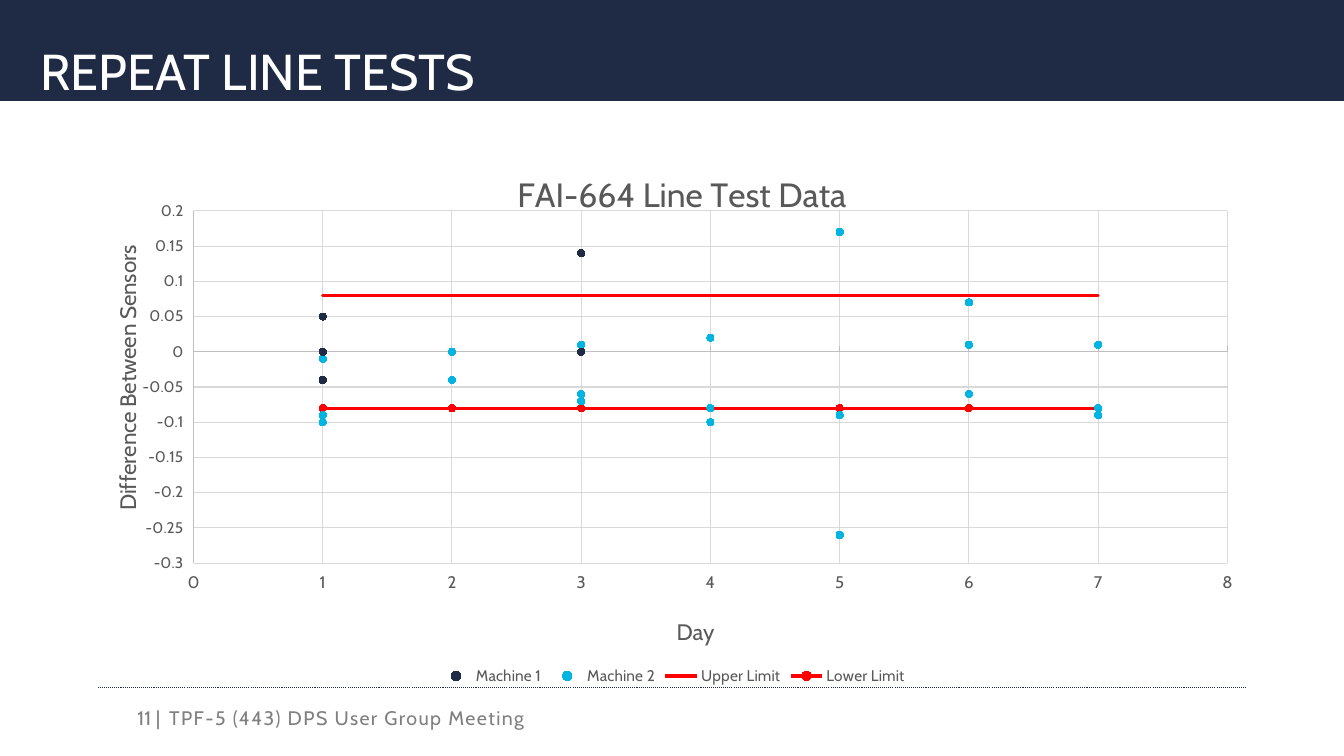
from dataclasses import dataclass

from lxml.etree import SubElement
from pptx import Presentation
from pptx.chart.data import XyChartData
from pptx.dml.color import RGBColor
from pptx.enum.chart import (XL_CHART_TYPE as CT, XL_LEGEND_POSITION as LP, XL_MARKER_STYLE as MS,
                             XL_TICK_LABEL_POSITION as TLP, XL_TICK_MARK as TM)
from pptx.enum.dml import MSO_LINE
from pptx.enum.shapes import MSO_CONNECTOR
from pptx.enum.text import MSO_ANCHOR as ANC, MSO_AUTO_SIZE as AUTO, PP_ALIGN as AL
from pptx.oxml import parse_xml
from pptx.oxml.ns import nsdecls, qn
from pptx.util import Inches, Pt


@dataclass(frozen=True)
class Theme:
    """Colours, font and type sizes of the slide."""
    font: str = "Cabin"
    navy: str = "1F2A44"
    cyan: str = "00B5E2"
    red: str = "FF0000"
    white: str = "FFFFFF"
    footer: str = "808080"
    label: str = "595959"
    axis: str = "BFBFBF"
    grid: str = "D9D9D9"
    title_pt: int = 36
    footer_pt: int = 14
    chart_title_pt: int = 24
    axis_title_pt: int = 16
    day_pt: int = 12
    label_pt: int = 11


T = Theme()
W, H = 13.33, 7.5
DAYS = list(range(1, 8)) * 3
MACHINE_1 = {0: 0.05, 2: 0.14, 7: -0.04, 9: 0, 14: 0, 16: 0.14}
MACHINE_2 = [-0.09, -0.04, 0.01, 0.02, 0.17, -0.06, 0.01,
             -0.01, 0, -0.07, -0.1, -0.26, 0.07, -0.09,
             -0.1, -0.04, -0.06, -0.08, -0.09, 0.01, -0.08]
SERIES = [
    ("Machine 1", [MACHINE_1.get(i) for i in range(len(DAYS))], None, T.navy),
    ("Machine 2", MACHINE_2, None, T.cyan),
    ("Upper Limit", [0.08] * len(DAYS), T.red, None),
    ("Lower Limit", [-0.08] * len(DAYS), T.red, T.red),
]


def put(obj, **values):
    """Set every given attribute on an object."""
    for name, value in values.items():
        setattr(obj, name, value)


def box(x, y, w, h):
    """Turn a box in inches into slide lengths."""
    return [Inches(v) for v in (x, y, w, h)]


def style_font(font, size, color, kern=None):
    """Format a font from the theme."""
    put(font, name=T.font, size=Pt(size), bold=False)
    font.color.rgb = RGBColor.from_string(color)
    if kern:
        font._element.set("kern", str(kern * 100))


def style_line(line, color, width, dash=None):
    """Format a line."""
    line.color.rgb = RGBColor.from_string(color)
    put(line, width=Pt(width), dash_style=dash)


def set_text(sp, text, size, color, insets, anchor, align=AL.LEFT, wrap=True, spacing=0):
    """Write one formatted line of text into a shape."""
    tf = sp.text_frame
    names = ("margin_left", "margin_top", "margin_right", "margin_bottom")
    put(tf, **dict(zip(names, map(Inches, insets))))
    put(tf, word_wrap=wrap, auto_size=AUTO.NONE, vertical_anchor=anchor)
    p = tf.paragraphs[0]
    p.alignment = align
    r = p.add_run()
    r.text = text
    style_font(r.font, size, color)
    if spacing:
        r.font._element.set("spc", str(spacing * 100))


def add_title(s, text):
    """Turn the title placeholder into the top banner."""
    sp = s.shapes.title
    put(sp, **dict(zip(("left", "top", "width", "height"), box(0, 0, W, 1))))
    sp.fill.solid()
    sp.fill.fore_color.rgb = RGBColor.from_string(T.navy)
    set_text(sp, text, T.title_pt, T.white, (0.4, 0.1, 0.4, 0), ANC.BOTTOM)


def add_footer(s, number, text):
    """Add the dotted rule, page number and meeting name."""
    y = H * 0.91
    rule = s.shapes.add_connector(MSO_CONNECTOR.STRAIGHT, *box(0.97, y, 12.37, y))
    style_line(rule.line, T.navy, 0.75, MSO_LINE.ROUND_DOT)
    SubElement(rule._element.spPr, qn("a:effectLst"))
    top, height = 6.92, 0.4
    page = s.shapes.add_textbox(*box(1.07, top, 0.52, height))
    set_text(page, number, T.footer_pt, T.footer, (0, 0, 0, 0), ANC.MIDDLE, AL.RIGHT, False)
    name = s.shapes.add_textbox(*box(1.58, top, 8.48, height))
    set_text(name, text, T.footer_pt, T.footer, (0.1, 0.05, 0.1, 0.05), ANC.MIDDLE, spacing=1)


def layout_xml(**values):
    """Build a manual layout from shares of the chart."""
    parts = "".join(f'<c:{k} val="{v}"/>' for k, v in values.items())
    return parse_xml(f'<c:layout {nsdecls("c")}><c:manualLayout>{parts}</c:manualLayout></c:layout>')


def set_chart_title(owner, text, size, x, y):
    """Title a chart or an axis at shares of the chart."""
    owner.has_title = True
    title = owner.chart_title if hasattr(owner, "chart_title") else owner.axis_title
    r = title.text_frame.paragraphs[0].add_run()
    r.text = text
    style_font(r.font, size, T.label, 12)
    el = title._element
    for old in el.findall(qn("c:layout")):
        el.remove(old)
    el.find(qn("c:tx")).addnext(layout_xml(xMode="edge", yMode="edge", x=x, y=y))
    return title


def style_axis(axis, size, tick, fmt):
    """Format one axis with its gridlines."""
    put(axis, has_major_gridlines=True, major_tick_mark=tick, minor_tick_mark=TM.NONE,
        tick_label_position=TLP.LOW)
    put(axis.tick_labels, number_format=fmt, number_format_is_linked=False)
    style_font(axis.tick_labels.font, size, T.label, 12)
    style_line(axis.format.line, T.axis, 0.75)
    style_line(axis.major_gridlines.format.line, T.grid, 0.75)


def style_series(series, line, marker):
    """Draw a series as points, a line or both."""
    series.smooth = False
    if line:
        style_line(series.format.line, line, 2.25)
    else:
        series.format.line.fill.background()
    if marker:
        put(series.marker, style=MS.CIRCLE, size=5)
        fmt = series.marker.format
        fmt.fill.solid()
        fmt.fill.fore_color.rgb = RGBColor.from_string(marker)
        style_line(fmt.line, marker, 0.75)
    else:
        series.marker.style = MS.NONE


def place_plot(chart, x, y, w, h):
    """Fix the inner plot area as shares of the chart."""
    area = chart._chartSpace.chart.plotArea
    for old in area.findall(qn("c:layout")):
        area.remove(old)
    area.insert(0, layout_xml(layoutTarget="inner", xMode="edge", yMode="edge", x=x, y=y, w=w, h=h))


def add_line_test_chart(s):
    """Add the scatter chart of sensor differences by day."""
    data = XyChartData()
    for name, values, _, _ in SERIES:
        series = data.add_series(name)
        for day, value in zip(DAYS, values):
            series.add_data_point(day, value)
    chart = s.shapes.add_chart(CT.XY_SCATTER, *box(0.96, 1.42, 11.42, 5.42), data).chart
    for pt in chart._chartSpace.xpath('.//c:pt[c:v="None"]'):
        pt.getparent().remove(pt)
    style_font(chart.font, T.label_pt, T.label, 12)
    set_chart_title(chart, "FAI-664 Line Test Data", T.chart_title_pt, 0.36, 0.04)
    day, difference = chart.category_axis, chart.value_axis
    style_axis(day, T.day_pt, TM.INSIDE, "#,##0")
    style_axis(difference, T.label_pt, TM.NONE, "General")
    set_chart_title(day, "Day", T.axis_title_pt, 0.5, 0.86)
    side = set_chart_title(difference, "Difference Between Sensors", T.axis_title_pt, 0.01, 0.18)
    side.text_frame._txBody.bodyPr.set("rot", "-5400000")
    for series, (_, _, line, marker) in zip(chart.plots[0].series, SERIES):
        style_series(series, line, marker)
    chart.plots[0].vary_by_categories = False
    chart.has_legend = True
    put(chart.legend, position=LP.BOTTOM, include_in_layout=False)
    style_font(chart.legend.font, T.label_pt, T.label, 12)
    place_plot(chart, 0.084, 0.124, 0.898, 0.645)


def main():
    """Build and save the slide."""
    prs = Presentation()
    put(prs, slide_width=Inches(W), slide_height=Inches(H))
    s = prs.slides.add_slide(prs.slide_layouts[5])
    add_title(s, "REPEAT LINE TESTS")
    add_footer(s, "11 |", "TPF-5 (443) DPS User Group Meeting")
    add_line_test_chart(s)
    prs.save("out.pptx")


if __name__ == "__main__":
    main()
